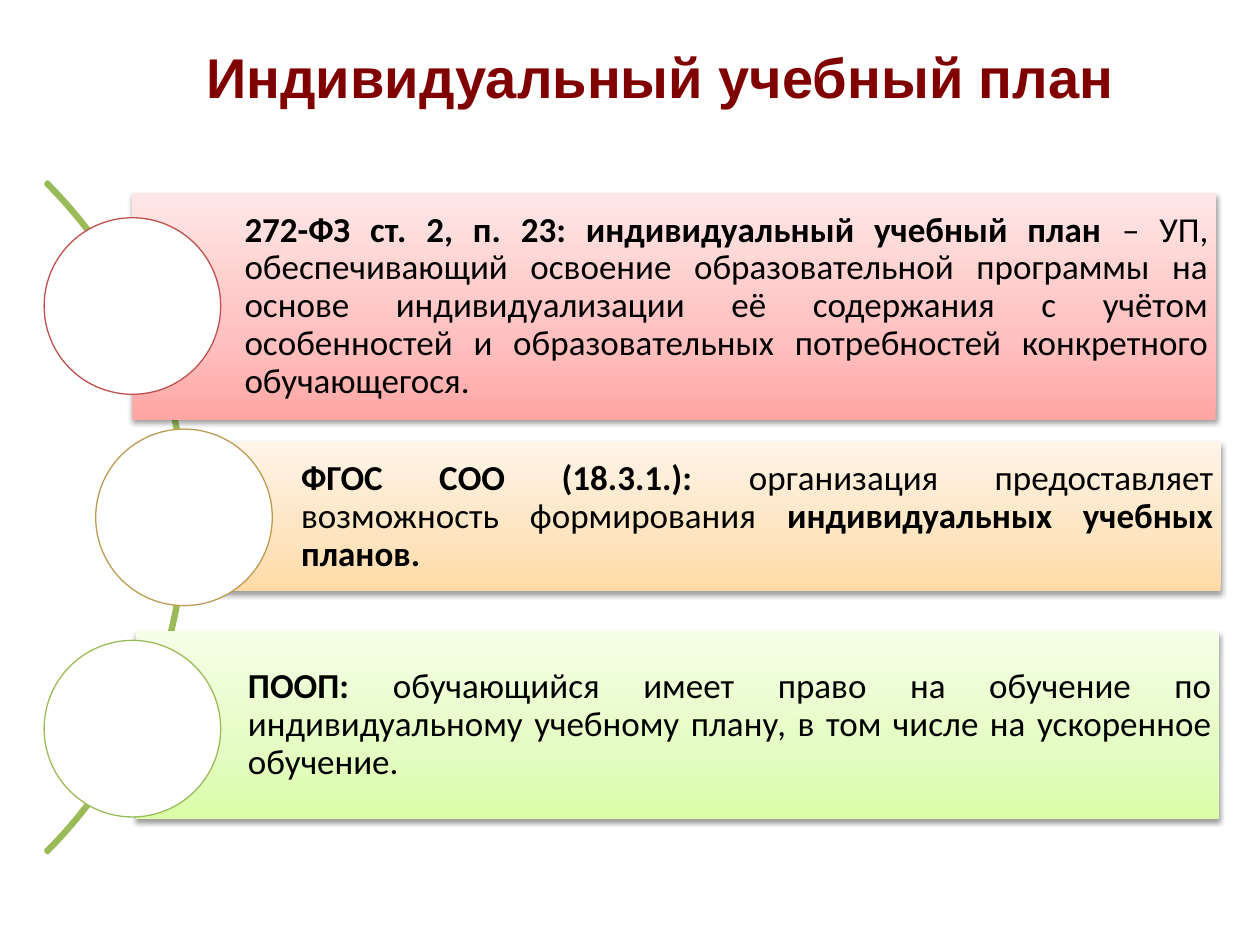
from copy import deepcopy

from lxml.etree import SubElement
from pptx import Presentation
from pptx.dml.color import RGBColor
from pptx.enum.shapes import MSO_SHAPE
from pptx.enum.text import MSO_ANCHOR, PP_ALIGN
from pptx.oxml.ns import qn
from pptx.util import Cm, Pt

COLORS = {
    "title": "800000",
    "text": "000000",
    "white": "FFFFFF",
    "arc": "9BBB59",
    "shadow": "000000",
}
TITLE = "Индивидуальный учебный план"
ITEMS = [
    {
        "box": (2.67, 3.89, 21.84, 4.57),
        "circle_center": 2.67,
        "outline": "C0504D",
        "gradient": ("FFA6A5", "FFC0BF", "FFE7E7"),
        "runs": [
            ("272-ФЗ ст. 2, п. 23: индивидуальный учебный план", True),
            (" – УП, обеспечивающий освоение образовательной программы на основе "
             "индивидуализации её содержания с учётом особенностей и "
             "образовательных потребностей конкретного обучающегося.", False),
        ],
    },
    {
        "box": (3.81, 8.92, 20.8, 3),
        "circle_center": 3.71,
        "outline": "BD9B53",
        "gradient": ("FFDAA5", "FEE4C0", "FFF4E7"),
        "runs": [
            ("ФГОС СОО (18.3.1.): ", True),
            ("организация предоставляет возможность формирования ", False),
            ("индивидуальных учебных планов.", True),
        ],
    },
    {
        "box": (2.74, 12.73, 21.84, 3.78),
        "circle_center": 2.67,
        "outline": "9BBB59",
        "gradient": ("DAFDA7", "E4FCC2", "F5FFE7"),
        "runs": [
            ("ПООП: ", True),
            ("обучающийся имеет право на обучение по индивидуальному учебному "
             "плану, в том числе на ускоренное обучение.", False),
        ],
    },
]
STOPS = (0, 0.35, 1)
MIDDLE = 10.43
STEP = 4.26
CIRCLE = 3.56
ARC_CENTER = -5.8
ARC_SIZE = 19.12


def color(value):
    return RGBColor.from_string(value)


def add_shape(slide, kind, left, top, width, height):
    shape = slide.shapes.add_shape(kind, Cm(left), Cm(top), Cm(width), Cm(height))
    shape.shadow.inherit = False
    return shape


def set_line(shape, value, width):
    shape.line.color.rgb = color(value)
    shape.line.width = Pt(width)


def format_run(run, font_name, size, value, bold):
    run.font.name = font_name
    run.font.size = Pt(size)
    run.font.color.rgb = color(value)
    run.font.bold = bold


def add_title(slide):
    title = slide.shapes.add_textbox(Cm(3.91), Cm(0.74), Cm(18.97), Cm(1.63))
    title.text_frame.word_wrap = False
    title.text_frame.text = TITLE
    format_run(title.text_frame.paragraphs[0].runs[0], "Arial", 32, COLORS["title"], True)


def add_arc(slide):
    arc = add_shape(slide, MSO_SHAPE.BLOCK_ARC, ARC_CENTER - ARC_SIZE / 2,
                    MIDDLE - ARC_SIZE / 2, ARC_SIZE, ARC_SIZE)
    for index, value in enumerate((189, 27, 0.003)):
        arc.adjustments[index] = value
    arc.fill.background()
    set_line(arc, COLORS["arc"], 2)


def set_gradient(shape, values):
    shape.fill.gradient()
    shape.fill.gradient_angle = 90
    first = next(shape.element.spPr.iter(qn("a:gs")))
    first.addnext(deepcopy(first))
    for stop, position, value in zip(shape.fill.gradient_stops, STOPS, values):
        stop.position = position
        stop.color.rgb = color(value)


def set_shadow(shape):
    effects = shape.element.spPr.find(qn("a:effectLst"))
    shadow = SubElement(effects, qn("a:outerShdw"), blurRad=str(Pt(3.1)),
                        dist=str(Pt(1.6)), dir="5400000", rotWithShape="0")
    shade = SubElement(shadow, qn("a:srgbClr"), val=COLORS["shadow"])
    SubElement(shade, qn("a:alpha"), val="38000")


def add_box(slide, item):
    box = add_shape(slide, MSO_SHAPE.RECTANGLE, *item["box"])
    set_gradient(box, item["gradient"])
    box.line.fill.background()
    set_shadow(box)
    frame = box.text_frame
    frame.word_wrap = True
    frame.vertical_anchor = MSO_ANCHOR.MIDDLE
    frame.margin_left = Cm(2.26)
    frame.margin_top = frame.margin_right = frame.margin_bottom = Cm(0.15)
    paragraph = frame.paragraphs[0]
    paragraph.alignment = PP_ALIGN.JUSTIFY
    paragraph.line_spacing = 0.9
    for text, bold in item["runs"]:
        run = paragraph.add_run()
        run.text = text
        format_run(run, "Calibri", 20, COLORS["text"], bold)


def add_circle(slide, item, center_y):
    circle = add_shape(slide, MSO_SHAPE.OVAL, item["circle_center"] - CIRCLE / 2,
                       center_y - CIRCLE / 2, CIRCLE, CIRCLE)
    circle.fill.solid()
    circle.fill.fore_color.rgb = color(COLORS["white"])
    set_line(circle, item["outline"], 0.75)


def main():
    presentation = Presentation()
    presentation.slide_width = Cm(25.4)
    presentation.slide_height = Cm(19.05)
    slide = presentation.slides.add_slide(presentation.slide_layouts[6])
    add_title(slide)
    add_arc(slide)
    for index, item in enumerate(ITEMS):
        add_box(slide, item)
        add_circle(slide, item, MIDDLE + (index - 1) * STEP)
    presentation.save("out.pptx")


if __name__ == "__main__":
    main()
